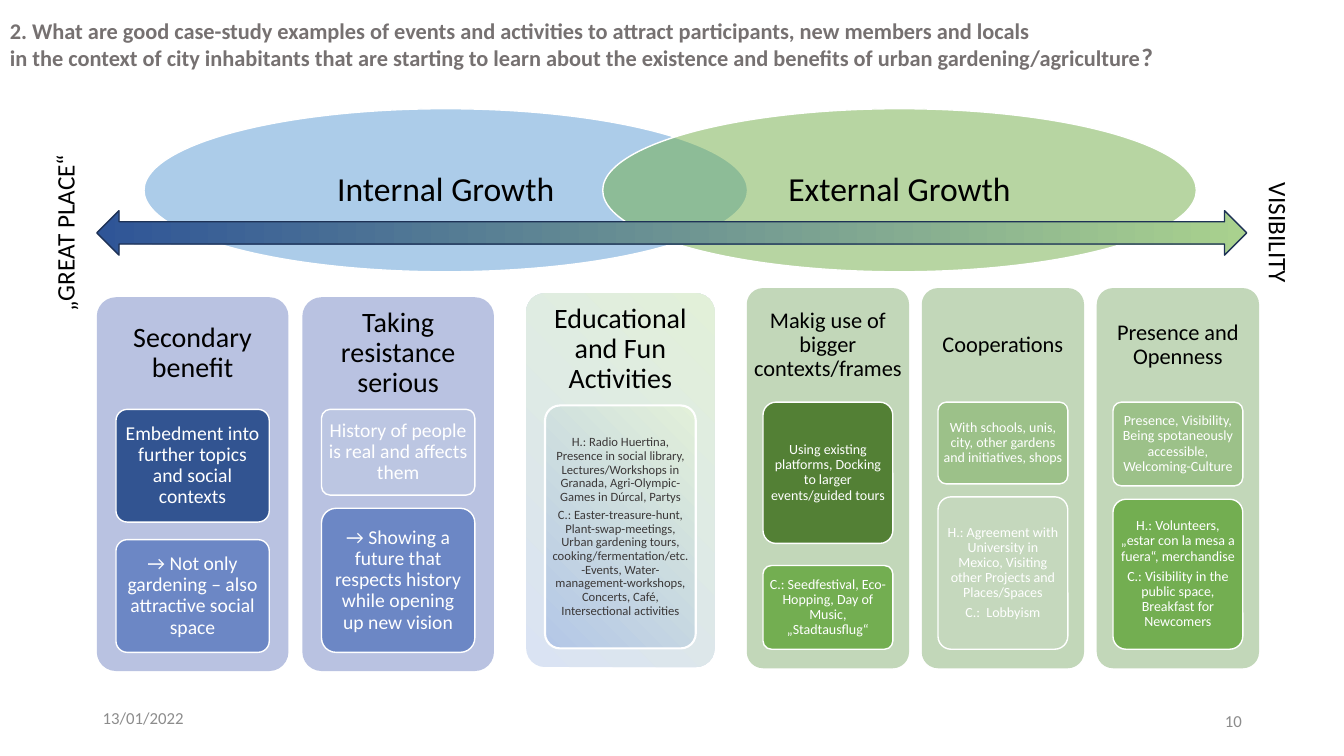
from lxml import etree
from pptx import Presentation, util as u
from pptx.dml.color import RGBColor
from pptx.enum import shapes, text
from pptx.oxml.ns import qn

FORM = shapes.MSO_SHAPE
ALIGN = text.PP_ALIGN
BLUE, GREEN, WHITE, BLACK = "2F5597", "A9D18E", "FFFFFF", "000000"


def color(hex_value):
    return RGBColor.from_string(hex_value)


def assign(target, values):
    for name, value in values.items():
        setattr(target, name, value)


def write(shape, paragraphs, size, ink, side=0.25, edge=0.13, align=ALIGN.CENTER,
          spacing=0.9, after=0.0, bold=False):
    frame = shape.text_frame
    assign(frame, {
        "word_wrap": True, "vertical_anchor": text.MSO_ANCHOR.MIDDLE,
        "margin_left": u.Cm(side), "margin_right": u.Cm(side),
        "margin_top": u.Cm(edge), "margin_bottom": u.Cm(edge),
    })
    for index, wording in enumerate(paragraphs):
        paragraph = frame.add_paragraph() if index else frame.paragraphs[0]
        paragraph.text = wording
        assign(paragraph, {"alignment": align, "line_spacing": spacing,
                           "space_after": u.Pt(after * size)})
        for run in paragraph.runs:
            style(run, size, ink, bold)


def style(run, size, ink, bold):
    assign(run.font, {"name": "Calibri", "size": u.Pt(size), "bold": bold})
    run.font.color.rgb = color(ink)


def label(slide, box, wording, size, ink, **options):
    area = slide.shapes.add_textbox(*map(u.Cm, box))
    write(area, [wording], size, ink, **options)
    return area


def panel(slide, form, box, fill, outline=None, weight=1, angle=0):
    shape = slide.shapes.add_shape(form, *map(u.Cm, box))
    shape.shadow.inherit = False
    if form == FORM.ROUNDED_RECTANGLE:
        shape.adjustments[0] = 0.1
    if isinstance(fill, tuple):
        shape.fill.gradient()
        shape.fill.gradient_angle = angle
        for stop, tone, position in zip(shape.fill.gradient_stops, fill, (0, 1)):
            stop.color.rgb = color(tone)
            stop.position = position
    else:
        shape.fill.solid()
        shape.fill.fore_color.rgb = color(fill)
    if outline:
        shape.line.color.rgb = color(outline)
        shape.line.width = u.Pt(weight)
    else:
        shape.line.fill.background()
    return shape


def header(slide, box):
    question = label(
        slide, box,
        "2. What are good case-study examples of events and activities to attract "
        "participants, new members and locals \vin the context of city inhabitants that are "
        "starting to learn about the existence and benefits of urban gardening/agriculture",
        16, "767171", align=ALIGN.LEFT, bold=True)
    mark = question.text_frame.paragraphs[0].add_run()
    mark.text = "?"
    style(mark, 18, "767171", True)


def growth(slide, box):
    left, top, width, height = box
    for name, start, span, fill in (("Internal Growth", 0, 15.21, "5B9BD5"),
                                    ("External Growth", width - 14.96, 14.96, "70AD47")):
        oval = panel(slide, FORM.OVAL, (left + start, top, span, height), fill, WHITE)
        tone = oval.fill._xPr.find(".//" + qn("a:srgbClr"))
        etree.SubElement(tone, qn("a:alpha")).set("val", "50000")
        write(oval, [name], 24, BLACK, 0.23, 0.08, after=0.35)


def spectrum(slide, box):
    left, top, width, height = box
    panel(slide, FORM.LEFT_RIGHT_ARROW, box, (BLUE, GREEN), "1E3256")
    length, depth = 4.72, 1.02
    middle = top + height / 2 - depth / 2
    for wording, center, turn in (("„GREAT PLACE“", left - 0.81, 270),
                                  ("VISIBILITY", left + width + 0.81, 90)):
        end = label(slide, (center - length / 2, middle, length, depth),
                    wording, 18, BLACK, spacing=1.0)
        end.rotation = turn


def card(slide, box, heading, size, fill, topics, topic_size, ink=WHITE, weight=1):
    left, top, width, height = box
    panel(slide, FORM.ROUNDED_RECTANGLE, box, fill, angle=45)
    pad = size * 0.01
    label(slide, (left, top, width, height * 0.3), heading, size, BLACK,
          side=pad, edge=pad, after=0.35)
    for index, (depth, tone, paragraphs) in enumerate(topics):
        start = top + (height * 0.95 - depth if index else height * 0.3)
        topic = panel(slide, FORM.ROUNDED_RECTANGLE,
                      (left + width * 0.1, start, width * 0.8, depth),
                      tone, WHITE, weight, 45)
        write(topic, paragraphs, topic_size, ink, topic_size * 0.007,
              topic_size * 0.005, after=0.35)


def internal_cards(slide, box):
    left, top, width, height = box
    cards = (
        ("Secondary benefit", (
            (2.84, "325491", ["Embedment into further topics and social contexts"]),
            (2.84, "6C87C5", ["→ Not only gardening – also attractive social space"]))),
        ("Taking resistance serious", (
            (2.16, "BCC6E2", ["History of people is real and affects them"]),
            (3.63, "6C87C5", ["→ Showing a future that respects history while opening "
                              "up new vision"]))),
    )
    span = 4.83
    pitch = width - span
    for index, (heading, topics) in enumerate(cards):
        card(slide, (left + index * pitch, top, span, height), heading, 20,
             "B9C2E1", topics, 14)


def shared_card(slide, box):
    activities = [
        "H.: Radio Huertina, Presence in social library, Lectures/Workshops in Granada, "
        "Agri-Olympic-Games in Dúrcal, Partys",
        "C.: Easter-treasure-hunt, Plant-swap-meetings, Urban gardening tours, "
        "cooking/fermentation/etc. -Events, Water-management-workshops, Concerts, Café, "
        "Intersectional activities",
    ]
    card(slide, box, "Educational and Fun Activities", 20, ("DAE3F3", "E2F0D9"),
         [(box[3] * 0.65, ("B4C7E7", "E2F0D9"), activities)], 9, "3B3838", 1.5)


def external_cards(slide, box):
    left, top, width, height = box
    cards = (
        ("Makig use of bigger contexts/frames", (
            (3.56, "538035", ["Using existing platforms, Docking to larger "
                              "events/guided tours"]),
            (2.11, "73AE51", ["C.: Seedfestival, Eco-Hopping, Day of Music, "
                              "„Stadtausflug“"]))),
        ("Cooperations", (
            (2.06, "9CC189", ["With schools, unis, city, other gardens and initiatives, "
                              "shops"]),
            (3.84, "C5D8BD", ["H.: Agreement with University in Mexico, Visiting other "
                              "Projects and Places/Spaces", "C.:  Lobbyism"]))),
        ("Presence and Openness", (
            (2.11, "9CC189", ["Presence, Visibility, Being spotaneously accessible, "
                              "Welcoming-Culture"]),
            (3.78, "73AE51", ["H.: Volunteers, „estar con la mesa a fuera“, merchandise",
                              "C.: Visibility in the public space, Breakfast for "
                              "Newcomers"]))),
    )
    span = 4.09
    pitch = (width - span) / (len(cards) - 1)
    for index, (heading, topics) in enumerate(cards):
        card(slide, (left + index * pitch, top, span, height), heading, 16,
             "C2D7B9", topics, 10)


def footer(slide, box):
    left, top, width, height = box
    span = 7.62
    label(slide, (left, top, span, height), "13/01/2022", 12, "8C8C8C",
          align=ALIGN.LEFT, spacing=1.0)
    label(slide, (left + width - span, top + 0.08, span, height), "10", 12, "8C8C8C",
          align=ALIGN.RIGHT, spacing=1.0)


def main():
    deck = Presentation()
    assign(deck, {"slide_width": u.Cm(33.87), "slide_height": u.Cm(19.05)})
    slide = deck.slides.add_slide(deck.slide_layouts[6])
    footer(slide, (2.34, 17.58, 29.21, 1.02))
    header(slide, (0, 0, 29.92, 2.31))
    growth(slide, (3.63, 2.74, 26.52, 4.11))
    spectrum(slide, (2.44, 5.31, 28.98, 1.12))
    internal_cards(slide, (2.44, 7.49, 10.01, 9.42))
    external_cards(slide, (18.82, 7.26, 12.91, 9.58))
    shared_card(slide, (13.26, 7.39, 4.75, 9.42))
    deck.save("out.pptx")


if __name__ == "__main__":
    main()
